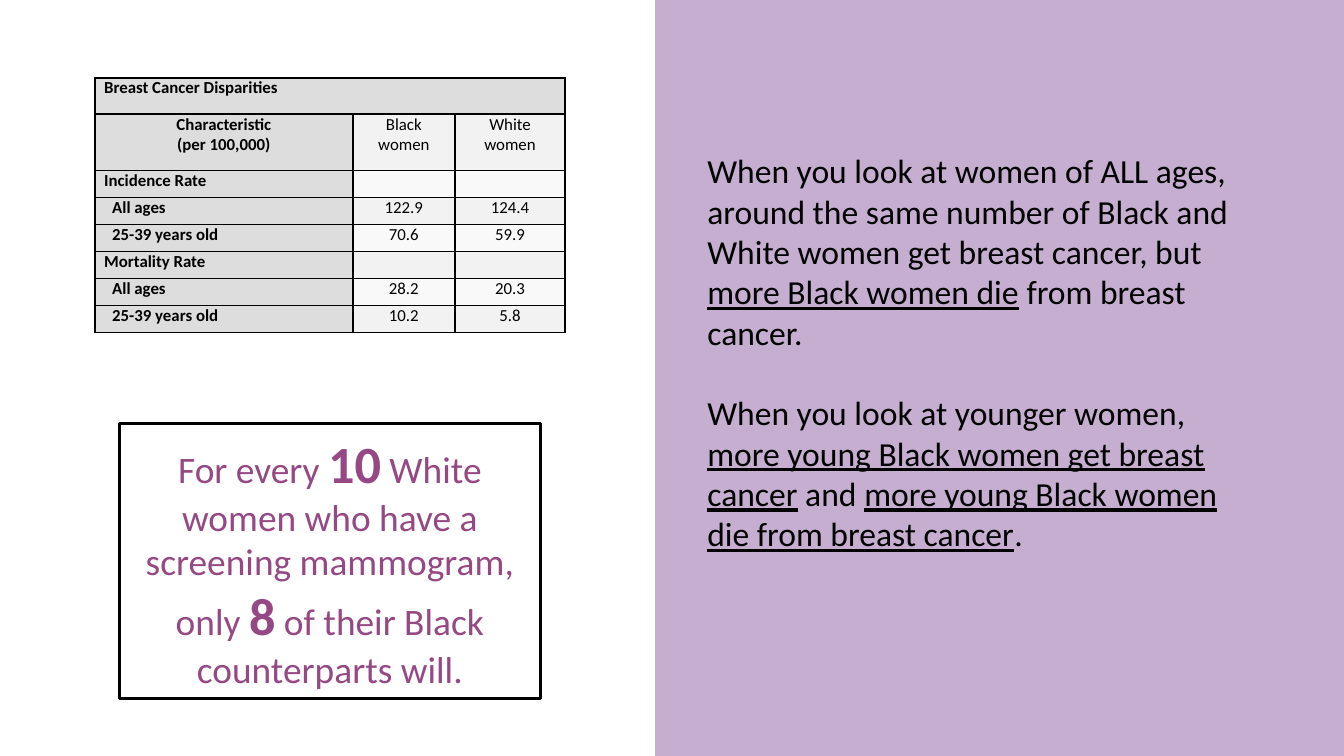
from lxml.etree import SubElement
from pptx import Presentation
from pptx.dml.color import RGBColor
from pptx.enum.shapes import MSO_SHAPE
from pptx.enum.text import MSO_ANCHOR, MSO_AUTO_SIZE, PP_ALIGN
from pptx.oxml.ns import qn
from pptx.util import Inches, Pt

BLACK = RGBColor(0x00, 0x00, 0x00)
WHITE = RGBColor(0xFF, 0xFF, 0xFF)
PURPLE = RGBColor(0x74, 0x3B, 0x8D)
PLUM = RGBColor(0x95, 0x48, 0x83)
LABEL_GRAY = RGBColor(0xDD, 0xDD, 0xDD)
STRIPES = [RGBColor(0xF2, 0xF2, 0xF2), RGBColor(0xF9, 0xF9, 0xF9)]

# Widescreen slide, 16 by 9
presentation = Presentation()
presentation.slide_width = Inches(10)
presentation.slide_height = presentation.slide_width * 9 // 16
slide = presentation.slides.add_slide(presentation.slide_layouts[6])


def place(left, top, width, height):
    """Turn percentages of the slide into lengths."""
    across, down = presentation.slide_width / 100, presentation.slide_height / 100
    return [round(n) for n in (left * across, top * down, width * across, height * down)]


def add_run(paragraph, text, size, color=BLACK, bold=None, underline=None):
    run = paragraph.add_run()
    run.text = text
    run.font.name = "Calibri"
    run.font.size = Pt(size)
    run.font.color.rgb = color
    run.font.bold = bold
    run.font.underline = underline


# Disparities table
rows = [
    ["Breast Cancer Disparities", "", ""],
    ["Characteristic\n(per 100,000)", "Black women", "White women"],
    ["Incidence Rate", "", ""],
    ["All ages", "122.9", "124.4"],
    ["25-39 years old", "70.6", "59.9"],
    ["Mortality Rate", "", ""],
    ["All ages", "28.2", "20.3"],
    ["25-39 years old", "10.2", "5.8"],
]
indented_labels = {"All ages", "25-39 years old"}
table = slide.shapes.add_table(len(rows), 3, *place(7.05, 10.32, 35, 33.8)).table
table.first_row = False
table.horz_banding = False
for column, share in zip(table.columns, [19.2, 7.6, 8.2]):
    column.width = place(0, 0, share, 0)[2]
for row, share in zip(table.rows, [4.8, 7.47] + [3.57] * 6):
    row.height = place(0, 0, 0, share)[3]

for row_index, texts in enumerate(rows):
    for column_index, text in enumerate(texts):
        cell = table.cell(row_index, column_index)
        is_label = column_index == 0
        cell.margin_left = Inches(0.13 if text in indented_labels else 0.07)
        cell.margin_right = Inches(0.07)
        cell.margin_top = cell.margin_bottom = 0

        # Borders come before the fill in the cell properties
        properties = cell._tc.get_or_add_tcPr()
        for side in ("a:lnL", "a:lnR", "a:lnT", "a:lnB"):
            line = SubElement(properties, qn(side), w=str(Pt(1)))
            fill = SubElement(line, qn("a:solidFill"))
            SubElement(fill, qn("a:srgbClr"), val=str(BLACK))
        cell.fill.solid()
        gray = LABEL_GRAY if is_label or row_index == 0 else STRIPES[(row_index + 1) % 2]
        cell.fill.fore_color.rgb = gray

        for line_index, line_text in enumerate(text.split("\n")):
            frame = cell.text_frame
            paragraph = frame.add_paragraph() if line_index else frame.paragraphs[0]
            if not is_label or row_index == 1:
                paragraph.alignment = PP_ALIGN.CENTER
            if line_text:
                add_run(paragraph, line_text, 9, bold=is_label)
            else:
                SubElement(paragraph._p, qn("a:endParaRPr"), sz="900")
table.cell(0, 0).merge(table.cell(0, 2))

# Translucent panel on the right
panel = slide.shapes.add_shape(MSO_SHAPE.RECTANGLE, *place(48.75, 0, 51.25, 100))
panel.shadow.inherit = False
panel.line.fill.background()
panel.fill.solid()
panel.fill.fore_color.rgb = PURPLE
panel_color = panel._element.spPr.find(".//" + qn("a:srgbClr"))
SubElement(panel_color, qn("a:alpha"), val="41000")

# Findings, with the key phrases underlined
findings = [
    [("When you look at women of ALL ages, around the same number of Black and "
      "White women get breast cancer, but ", False),
     ("more Black women die", True),
     (" from breast cancer.", False)],
    [("When you look at younger women, ", False),
     ("more young Black women get breast cancer", True),
     (" and ", False),
     ("more young Black women die from breast cancer", True),
     (".", False)],
]
text_box = slide.shapes.add_textbox(*place(51.65, 19, 41.3, 55.64))
frame = text_box.text_frame
frame.word_wrap = True
frame.auto_size = MSO_AUTO_SIZE.SHAPE_TO_FIT_TEXT
for index, runs in enumerate(findings):
    paragraph = frame.add_paragraph() if index else frame.paragraphs[0]
    if index:
        paragraph.space_before = Pt(21.6)
    for text, underlined in runs:
        add_run(paragraph, text, 18, underline=underlined)

# Screening callout, with the numbers enlarged
callout = slide.shapes.add_shape(MSO_SHAPE.RECTANGLE, *place(8.9, 56, 31.3, 36.44))
callout.shadow.inherit = False
callout.fill.solid()
callout.fill.fore_color.rgb = WHITE
callout.line.color.rgb = BLACK
callout.line.width = Pt(1.75)
frame = callout.text_frame
frame.word_wrap = True
frame.auto_size = MSO_AUTO_SIZE.SHAPE_TO_FIT_TEXT
frame.vertical_anchor = MSO_ANCHOR.MIDDLE
paragraph = frame.paragraphs[0]
paragraph.alignment = PP_ALIGN.CENTER
for text in ["For every ", "10", " White women who have a screening mammogram, only ",
             "8", " of their Black counterparts will."]:
    is_number = text.isdigit()
    add_run(paragraph, text, 28 if is_number else 20, PLUM, bold=is_number)

presentation.save("out.pptx")
